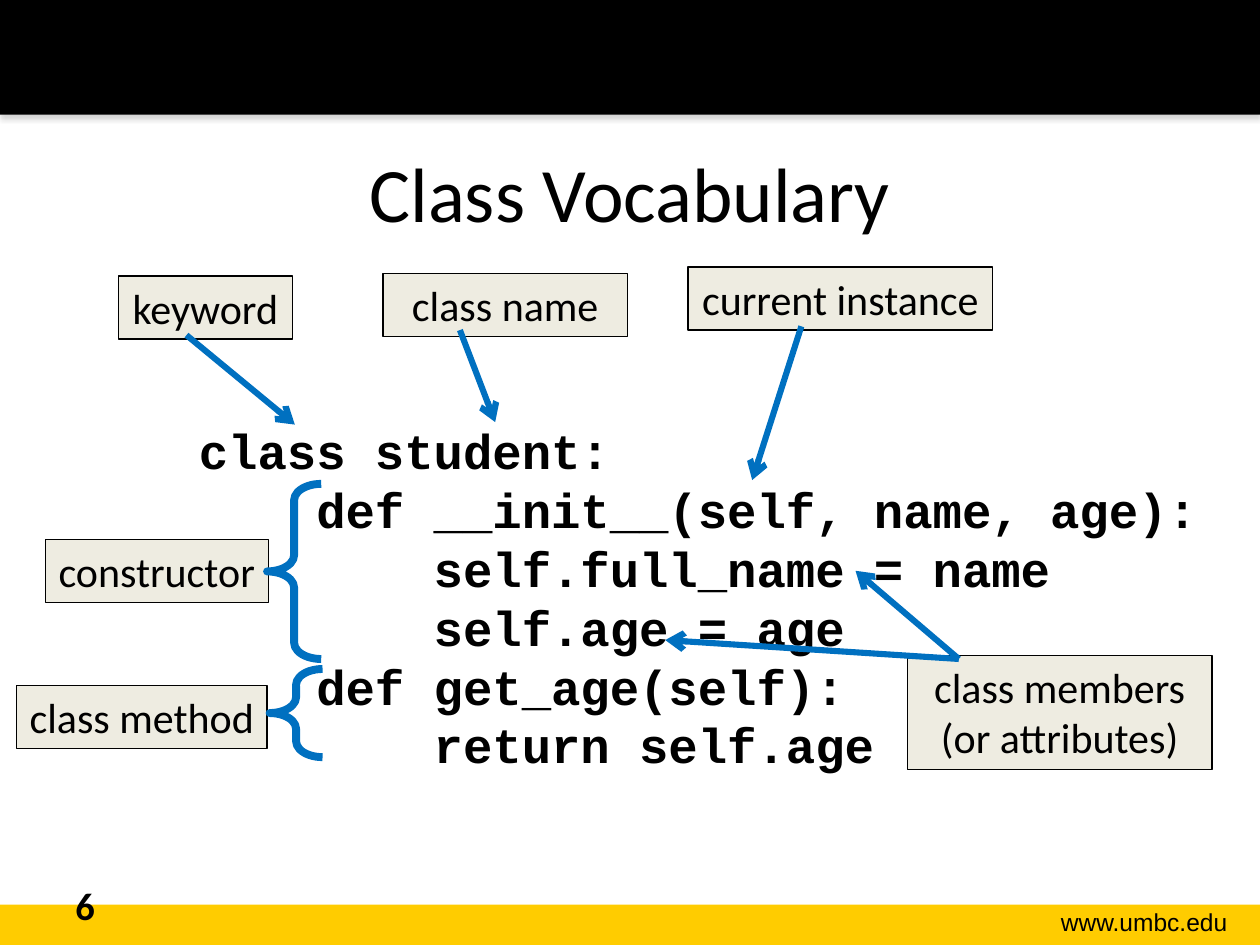
from lxml import etree
from pptx import Presentation
from pptx import util as u
from pptx.dml.color import RGBColor
from pptx.enum import shapes, text
from pptx.oxml.ns import qn

COLORS = {name: RGBColor.from_string(value) for name, value in {
    "black": "000000", "gold": "FFCC00", "cream": "EEECE1", "blue": "0070C0",
}.items()}

deck = Presentation()
deck.slide_width, deck.slide_height = u.Inches(10), u.Inches(7.5)
slide = deck.slides.add_slide(deck.slide_layouts[6])
COL, ROW = deck.slide_width / 100, deck.slide_height / 75  # grid of 100 by 75


def add_preset(kind, left, top, width, height, fill=None, line=None, weight=0.75):
    """Add a shadowless preset shape placed in grid columns and rows."""
    shape = slide.shapes.add_shape(
        kind, int(left * COL), int(top * ROW), int(width * COL), int(height * ROW))
    shape.shadow.inherit = False
    if fill:
        shape.fill.solid()
        shape.fill.fore_color.rgb = COLORS[fill]
    else:
        shape.fill.background()
    if line:
        shape.line.color.rgb = COLORS[line]
        shape.line.width = u.Pt(weight)
    else:
        shape.line.fill.background()
    return shape


def write(frame, lines, size, font="Calibri", bold=False, align=text.PP_ALIGN.LEFT,
          anchor=text.MSO_ANCHOR.TOP, wrap=True):
    frame.word_wrap = wrap
    frame.vertical_anchor = anchor
    frame.text = "\n".join(lines)
    for paragraph in frame.paragraphs:
        paragraph.alignment = align
        paragraph.font.name = font
        paragraph.font.size = u.Pt(size)
        paragraph.font.bold = bold
        paragraph.font.color.rgb = COLORS["black"]


# Bands at the foot and the head
add_preset(shapes.MSO_SHAPE.RECTANGLE, 0, 71.8, 100, 3.2, "gold")
header = add_preset(shapes.MSO_SHAPE.RECTANGLE, 0, 0, 100, 9.1, "black")
shadow = etree.SubElement(
    header._element.spPr.find(qn("a:effectLst")), qn("a:outerShdw"),
    blurRad=str(u.Pt(3.1)), dist=str(u.Pt(1.8)), dir=str(90 * 60000), rotWithShape="0")
shade = etree.SubElement(shadow, qn("a:srgbClr"), val="808080")
etree.SubElement(shade, qn("a:alpha"), val="35000")

code = [
    "class student:",
    "    def __init__(self, name, age):",
    "        self.full_name = name",
    "        self.age = age",
    "    def get_age(self):",
    "        return self.age",
]
for (left, top, width, height), lines, style in [
    ((78.5, 71.5, 19.9, 3.4), ["www.umbc.edu"],
     dict(size=14, font="Arial", align=text.PP_ALIGN.RIGHT)),
    ((5, 9, 90, 12.5), ["Class Vocabulary"],
     dict(size=44, align=text.PP_ALIGN.CENTER, anchor=text.MSO_ANCHOR.MIDDLE)),
    ((5, 69.5, 23.3, 4), ["6"], dict(size=22, bold=True)),
    ((14.8, 32.9, 82.1, 29.3), code, dict(size=28, font="Courier New", bold=True)),
]:
    box = slide.shapes.add_textbox(
        int(left * COL), int(top * ROW), int(width * COL), int(height * ROW))
    write(box.text_frame, lines, **style)

# Each term: label, its place, the arrows it sends and the brace it explains
terms = [
    ("keyword", (9.4, 21.9, 13.8, 5), [(14.8, 26.6, 23.4, 33.7)], None),
    ("class name", (30.4, 21.7, 19.4, 5), [(36.5, 26.2, 39.3, 33.5)], None),
    ("current instance", (54.6, 21.2, 24.2, 5), [(63.6, 25.9, 59.7, 38.1)], None),
    ("constructor", (3.6, 42.8, 17.7, 5), [], (21.2, 38.4, 4.3, 13.9)),
    ("class members\v(or attributes)", (72, 52, 24.2, 9.1),
     [(76.1, 52.3, 67.9, 45.3), (76.1, 52.3, 52.8, 50.8)], None),
    ("class method", (1.3, 54.4, 19.9, 5), [], (21.4, 53.1, 4.2, 7)),
]
for term, place, arrows, brace_place in terms:
    label = add_preset(shapes.MSO_SHAPE.RECTANGLE, *place, "cream", "black")
    write(label.text_frame, [term], 24, align=text.PP_ALIGN.CENTER, wrap=False)

    for x1, y1, x2, y2 in arrows:
        arrow = slide.shapes.add_connector(
            shapes.MSO_CONNECTOR.STRAIGHT,
            int(x1 * COL), int(y1 * ROW), int(x2 * COL), int(y2 * ROW))
        arrow.line.color.rgb = COLORS["blue"]
        arrow.line.width = u.Pt(3.5)
        properties = arrow._element.spPr
        etree.SubElement(properties.find(qn("a:ln")), qn("a:tailEnd"), type="arrow")
        etree.SubElement(properties, qn("a:effectLst"))

    if brace_place:
        brace = add_preset(shapes.MSO_SHAPE.RIGHT_BRACE, *brace_place,
                           line="blue", weight=4.5)
        brace.adjustments[0] = 0.3
        brace._element.spPr.find(qn("a:xfrm")).set("flipH", "1")

deck.save("out.pptx")
